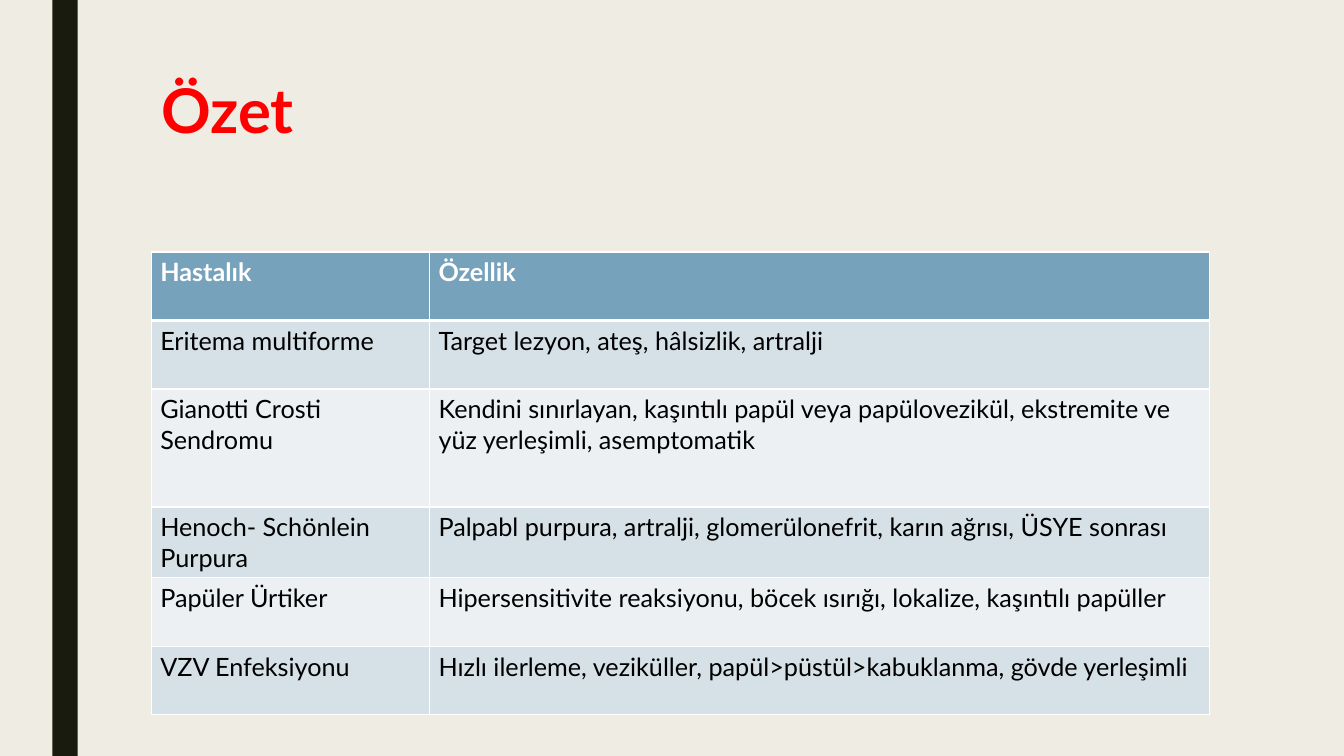
from lxml.etree import SubElement
from pptx import Presentation
from pptx.dml.color import RGBColor
from pptx.enum.shapes import MSO_SHAPE
from pptx.enum.text import MSO_ANCHOR
from pptx.oxml.ns import qn
from pptx.util import Inches, Pt

TITLE = "Özet"
DISEASES = [
    ("Hastalık", "Özellik"),
    ("Eritema multiforme", "Target lezyon, ateş, hâlsizlik, artralji"),
    ("Gianotti Crosti Sendromu",
     "Kendini sınırlayan, kaşıntılı papül veya papülovezikül, "
     "ekstremite ve yüz yerleşimli, asemptomatik"),
    ("Henoch- Schönlein Purpura",
     "Palpabl purpura, artralji, glomerülonefrit, karın ağrısı, ÜSYE sonrası"),
    ("Papüler Ürtiker",
     "Hipersensitivite reaksiyonu, böcek ısırığı, lokalize, kaşıntılı papüller"),
    ("VZV Enfeksiyonu",
     "Hızlı ilerleme, veziküller, papül>püstül>kabuklanma, gövde yerleşimli"),
]
COLUMN_WIDTHS = [2.76, 7.74]
ROW_HEIGHT, TALL_ROW, TALL_HEIGHT = 0.68, 2, 1.17
LEFT, WIDTH = 1.5, 10.5
HEADER_FILL, BAND_FILLS = "77A2BB", ["ECF0F3", "D6E0E7"]


def paint(fill, color):
    fill.solid()
    fill.fore_color.rgb = RGBColor.from_string(color)


def write(frame, text, size=18, color="000000", bold=False, spacing=None):
    frame.word_wrap = True
    paragraph = frame.paragraphs[0]
    paragraph.line_spacing = spacing
    run = paragraph.add_run()
    run.text = text
    run.font.name, run.font.size, run.font.bold = "Lato", Pt(size), bold
    run.font.color.rgb = RGBColor.from_string(color)


def add_borders(cell, color="FFFFFF", **widths):
    """Draw the cell's sides; widths maps L, R, T and B to points."""
    properties = cell._tc.get_or_add_tcPr()
    for side in "LRTB":
        line = SubElement(properties, qn(f"a:ln{side}"), w=str(Pt(widths.get(side, 1))))
        fill = SubElement(line, qn("a:solidFill"))
        SubElement(fill, qn("a:srgbClr"), val=color)


def add_disease_table(slide):
    heights = [TALL_HEIGHT if row == TALL_ROW else ROW_HEIGHT
               for row in range(len(DISEASES))]
    table = slide.shapes.add_table(
        len(DISEASES), len(COLUMN_WIDTHS), Inches(LEFT), Inches(2.5),
        Inches(WIDTH), Inches(sum(heights))).table
    for column, width in zip(table.columns, COLUMN_WIDTHS):
        column.width = Inches(width)
    for row, height in zip(table.rows, heights):
        row.height = Inches(height)
    for row, entries in enumerate(DISEASES):
        header = row == 0
        for column, entry in enumerate(entries):
            cell = table.cell(row, column)
            cell.margin_left = cell.margin_right = Inches(0.09)
            cell.margin_top = cell.margin_bottom = Inches(0.05)
            add_borders(cell, T=3 if row == 1 else 1, B=3 if header else 1)
            paint(cell.fill, HEADER_FILL if header else BAND_FILLS[row % 2])
            write(cell.text_frame, entry, bold=header,
                  color="FFFFFF" if header else "000000")


def main():
    deck = Presentation()
    deck.slide_width, deck.slide_height = Inches(13.33), Inches(7.5)
    slide = deck.slides.add_slide(deck.slide_layouts[6])
    paint(slide.background.fill, "EFEDE3")

    side_bar = slide.shapes.add_shape(
        MSO_SHAPE.RECTANGLE, Inches(0.52), 0, Inches(0.25), deck.slide_height)
    side_bar.shadow.inherit = False
    paint(side_bar.fill, "191B0E")
    side_bar.line.fill.background()

    title = slide.shapes.add_textbox(
        Inches(LEFT), Inches(0.75), Inches(WIDTH), Inches(1.62)).text_frame
    title.vertical_anchor = MSO_ANCHOR.TOP
    write(title, TITLE, size=44, color="FF0000", bold=True, spacing=0.89)

    add_disease_table(slide)
    deck.save("out.pptx")


if __name__ == "__main__":
    main()
